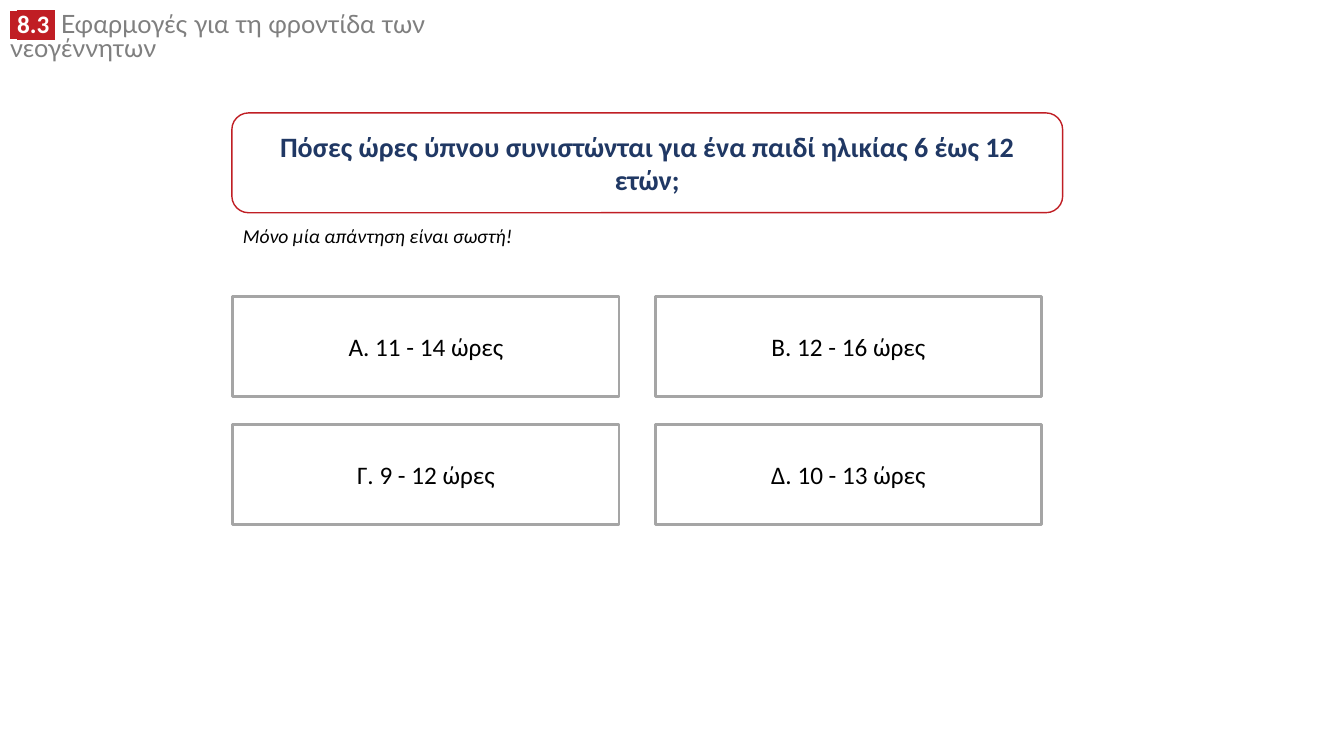
"""Build a quiz slide with one question and four possible answers."""
from lxml import etree
from pptx import Presentation
from pptx.dml.color import RGBColor
from pptx.enum.shapes import MSO_SHAPE
from pptx.enum.text import MSO_ANCHOR, MSO_AUTO_SIZE, PP_ALIGN
from pptx.oxml.ns import qn
from pptx.util import Inches, Pt

RECTANGLE = MSO_SHAPE.RECTANGLE
ROUNDED = MSO_SHAPE.ROUNDED_RECTANGLE
TOP, MIDDLE = MSO_ANCHOR.TOP, MSO_ANCHOR.MIDDLE
LEFT, CENTER = PP_ALIGN.LEFT, PP_ALIGN.CENTER
GROW = MSO_AUTO_SIZE.SHAPE_TO_FIT_TEXT

WHITE = RGBColor(0xFF, 0xFF, 0xFF)
BLACK = RGBColor(0x00, 0x00, 0x00)
RED = RGBColor(0xC0, 0x1E, 0x24)
NAVY = RGBColor(0x20, 0x38, 0x64)
GRAY = RGBColor(0x7F, 0x7F, 0x7F)
SILVER = RGBColor(0xA5, 0xA5, 0xA5)

TITLE_ONLY = 5
HEADING = [
    (" ", "Arial", WHITE, True),
    ("8.3 ", "Calibri", WHITE, True),
    (" ", "Calibri", GRAY, False),
    ("Εφαρμογές για τη φροντίδα των νεογέννητων", "Lato", GRAY, False),
]
QUESTION = "Πόσες ώρες ύπνου συνιστώνται για ένα παιδί ηλικίας 6 έως 12 ετών;"
HINT = "Μόνο μία απάντηση είναι σωστή!"
ANSWERS = ["A. 11 - 14 ώρες", "B. 12 - 16 ώρες", "Γ. 9 - 12 ώρες", "Δ. 10 - 13 ώρες"]
GRID_LEFT, GRID_TOP = 2.31, 2.94
COLUMN_STEP, ROW_STEP = 4.19, 1.27


def format_span(span, size, color, bold=False, italic=False, font="Calibri"):
    """Set the font of one run."""
    span.font.name = font
    span.font.size = Pt(size)
    span.font.bold = bold
    span.font.italic = italic
    span.font.color.rgb = color


def highlight(span, color):
    """Put a coloured background behind one run."""
    marker = etree.Element(qn("a:highlight"))
    etree.SubElement(marker, qn("a:srgbClr"), val=str(color))
    span.font._element.find(qn("a:solidFill")).addnext(marker)


def place(box, left, top, width, height):
    """Move and size a box, in inches."""
    box.left, box.top = Inches(left), Inches(top)
    box.width, box.height = Inches(width), Inches(height)


def add_heading(page):
    """Fill the title with the section number and section name."""
    title = page.shapes.title
    place(title, 0, 0.09, 5.73, 0.34)
    frame = title.text_frame
    frame.word_wrap = True
    frame.auto_size = GROW
    frame.vertical_anchor = TOP
    para = frame.paragraphs[0]
    para.alignment = LEFT
    para.line_spacing = 0.8
    for text, font, color, is_number in HEADING:
        span = para.add_run()
        span.text = text
        format_span(span, 18, color, bold=is_number, font=font)
        if is_number:
            highlight(span, RED)


def add_panel(page, kind, bounds, text, line_color, line_width, **style):
    """Add an outlined white panel with centred text."""
    panel = page.shapes.add_shape(kind, *map(Inches, bounds))
    panel.shadow.inherit = False
    panel.fill.solid()
    panel.fill.fore_color.rgb = WHITE
    panel.line.color.rgb = line_color
    panel.line.width = Pt(line_width)
    frame = panel.text_frame
    frame.word_wrap = True
    frame.vertical_anchor = MIDDLE
    frame.text = text
    para = frame.paragraphs[0]
    para.alignment = CENTER
    format_span(para.runs[0], **style)


def add_hint(page):
    """Add the italic hint below the question."""
    box = page.shapes.add_textbox(Inches(2.31), Inches(2.17), Inches(3.01), Inches(0.34))
    frame = box.text_frame
    frame.word_wrap = True
    frame.auto_size = GROW
    frame.text = HINT
    format_span(frame.paragraphs[0].runs[0], 14, BLACK, italic=True)


def add_answers(page):
    """Lay out the answers in two columns."""
    for index, answer in enumerate(ANSWERS):
        row, column = divmod(index, 2)
        bounds = (GRID_LEFT + column * COLUMN_STEP, GRID_TOP + row * ROW_STEP, 3.83, 0.99)
        add_panel(page, RECTANGLE, bounds, answer, SILVER, 2, size=18, color=BLACK)


def main():
    """Create the deck and save it."""
    deck = Presentation()
    deck.slide_width, deck.slide_height = Inches(13.33), Inches(7.5)
    page = deck.slides.add_slide(deck.slide_layouts[TITLE_ONLY])
    add_heading(page)
    add_panel(page, ROUNDED, (2.3, 1.12, 8.24, 0.99), QUESTION, RED, 1,
              size=20, color=NAVY, bold=True)
    add_hint(page)
    add_answers(page)
    deck.save("out.pptx")


if __name__ == "__main__":
    main()
